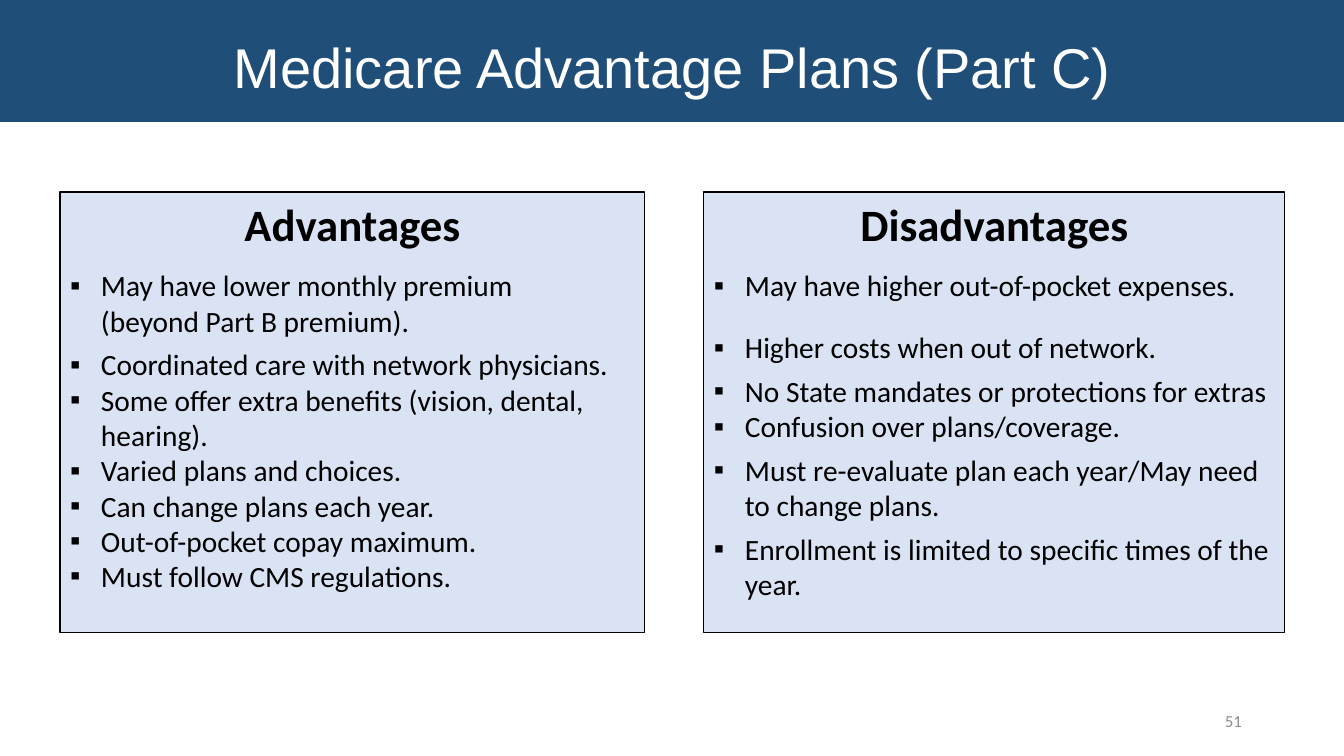
from dataclasses import dataclass

from lxml import etree
from pptx import Presentation
from pptx import util as u
from pptx.dml.color import RGBColor
from pptx.enum import shapes, text
from pptx.oxml import ns

EMU_PER_PX = 914400 / 100.8
COLORS = {
    "banner": "1F4E79",
    "panel": "DAE3F3",
    "ink": "000000",
    "title": "FFFFFF",
    "number": "8C8C8C",
}
INDENT = 31


@dataclass
class Bullet:
    wording: str
    space_after: int = 0


@dataclass
class Panel:
    left: int
    width: int
    heading: str
    bullets: list[Bullet]


PANELS = [
    Panel(60, 585, "Advantages", [
        Bullet("May have lower monthly premium\v(beyond Part B premium).", 6),
        Bullet("Coordinated care with network physicians."),
        Bullet("Some offer extra benefits (vision, dental, hearing)."),
        Bullet("Varied plans and choices."),
        Bullet("Can change plans each year."),
        Bullet("Out-of-pocket copay maximum."),
        Bullet("Must follow CMS regulations."),
    ]),
    Panel(704, 581, "Disadvantages", [
        Bullet("May have higher out-of-pocket expenses.", 19),
        Bullet("Higher costs when out of network.", 6),
        Bullet("No State mandates or protections for extras"),
        Bullet("Confusion over plans/coverage.", 6),
        Bullet("Must re-evaluate plan each year/May need to change plans.", 6),
        Bullet("Enrollment is limited to specific times of the year.", 6),
    ]),
]


def px(length: int) -> int:
    return round(length * EMU_PER_PX)


def color(name: str) -> RGBColor:
    return RGBColor.from_string(COLORS[name])


def set_frame(frame, anchor, top: int = 5) -> None:
    frame.word_wrap = True
    frame.vertical_anchor = anchor
    frame.margin_left = frame.margin_right = px(10)
    frame.margin_top, frame.margin_bottom = px(top), px(5)


def write(paragraph, wording: str, size: int, ink: str, align,
          font: str = "Calibri", bold: bool = False, space_after: int = 0) -> None:
    paragraph.text = wording
    paragraph.alignment = align
    paragraph.space_after = u.Pt(space_after)
    for run in paragraph.runs:
        run.font.name, run.font.size, run.font.bold = font, u.Pt(size), bold
        run.font.color.rgb = color(ink)


def add_box(slide, left: int, top: int, width: int, height: int, fill: str):
    box = slide.shapes.add_shape(
        shapes.MSO_SHAPE.RECTANGLE, px(left), px(top), px(width), px(height))
    box.shadow.inherit = False
    box.fill.solid()
    box.fill.fore_color.rgb = color(fill)
    return box


def add_bullet_mark(paragraph) -> None:
    properties = paragraph._p.get_or_add_pPr()
    properties.set("marL", str(px(INDENT)))
    properties.set("indent", str(-px(INDENT)))
    etree.SubElement(properties, ns.qn("a:buFont")).set("typeface", "Arial")
    etree.SubElement(properties, ns.qn("a:buChar")).set("char", "▪")


def add_panel(slide, panel: Panel) -> None:
    box = add_box(slide, panel.left, 192, panel.width, 441, "panel")
    box.line.color.rgb = color("ink")
    box.line.width = u.Pt(0.75)
    frame = box.text_frame
    set_frame(frame, text.MSO_ANCHOR.TOP)
    write(frame.paragraphs[0], panel.heading, 32, "ink", text.PP_ALIGN.CENTER,
          bold=True, space_after=12)
    for bullet in panel.bullets:
        paragraph = frame.add_paragraph()
        write(paragraph, bullet.wording, 21, "ink", text.PP_ALIGN.LEFT,
              space_after=bullet.space_after)
        add_bullet_mark(paragraph)


def main() -> None:
    deck = Presentation()
    deck.slide_width, deck.slide_height = px(1344), px(756)
    slide = deck.slides.add_slide(deck.slide_layouts[6])

    # Title banner
    banner = add_box(slide, 0, 0, 1344, 122, "banner")
    banner.line.fill.background()
    set_frame(banner.text_frame, text.MSO_ANCHOR.MIDDLE, top=15)
    write(banner.text_frame.paragraphs[0], "Medicare Advantage Plans (Part C)",
          40, "title", text.PP_ALIGN.CENTER, font="Arial")

    # Two panels side by side
    for panel in PANELS:
        add_panel(slide, panel)

    # Slide number
    number = slide.shapes.add_textbox(px(950), px(701), px(302), px(40))
    set_frame(number.text_frame, text.MSO_ANCHOR.MIDDLE)
    write(number.text_frame.paragraphs[0], "51", 12, "number", text.PP_ALIGN.RIGHT)

    deck.save("out.pptx")


if __name__ == "__main__":
    main()
